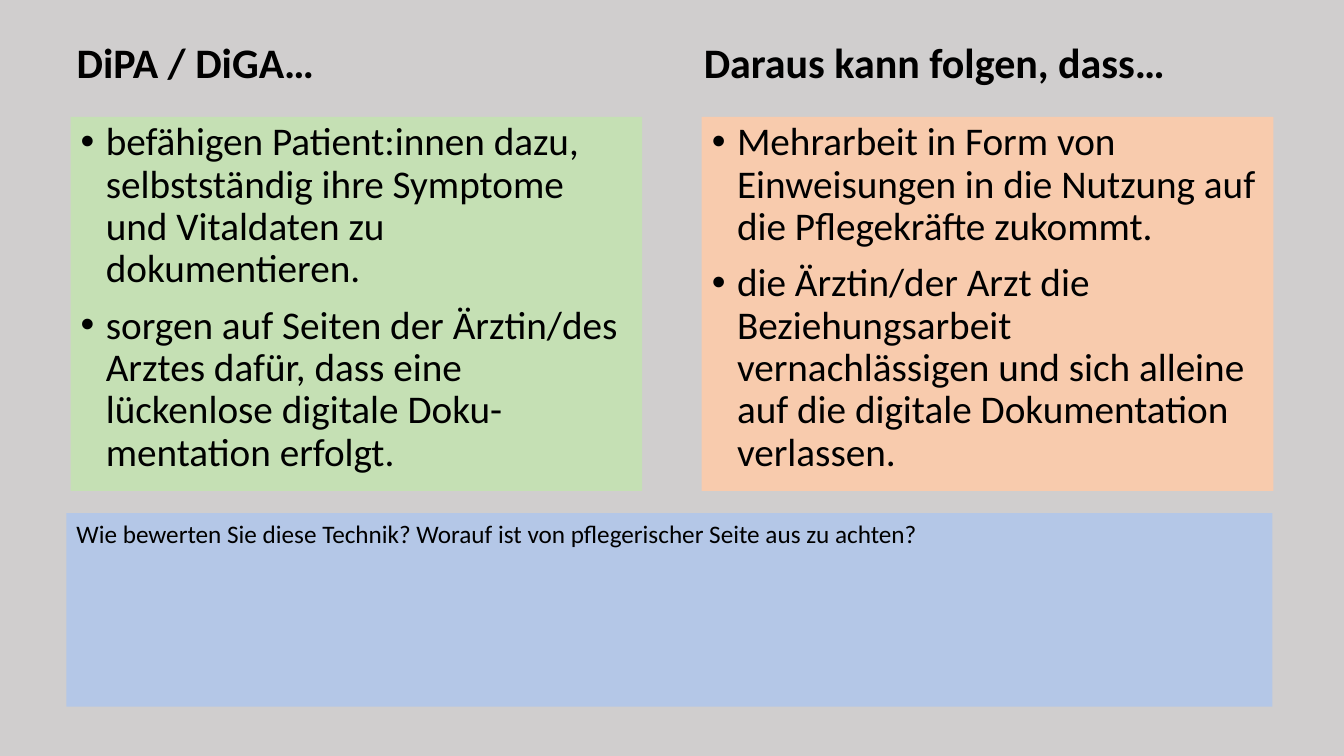
from dataclasses import dataclass

from lxml.etree import SubElement
from pptx import Presentation
from pptx.dml.color import RGBColor
from pptx.enum.shapes import MSO_SHAPE
from pptx.enum.text import MSO_ANCHOR, MSO_AUTO_SIZE, PP_ALIGN
from pptx.oxml.ns import qn
from pptx.util import Inches, Pt


@dataclass(frozen=True)
class Theme:
    """Colours, font and type sizes of the slide."""
    background: str = "D0CECE"
    benefits: str = "C5E0B4"
    risks: str = "F8CBAD"
    question: str = "B4C7E7"
    text: str = "000000"
    font: str = "Calibri"
    title_size: int = 30
    body_size: int = 28
    question_size: int = 18


THEME = Theme()
HEADINGS = ("DiPA / DiGA…", "Daraus kann folgen, dass…")
BENEFITS = (
    "befähigen Patient:innen dazu, selbstständig ihre Symptome und Vitaldaten zu dokumentieren.",
    "sorgen auf Seiten der Ärztin/des Arztes dafür, dass eine lückenlose digitale Doku-mentation erfolgt.",
)
RISKS = (
    "Mehrarbeit in Form von Einweisungen in die Nutzung auf die Pflegekräfte zukommt.",
    "die Ärztin/der Arzt die Beziehungsarbeit vernachlässigen und sich alleine auf die digitale "
    "Dokumentation verlassen.",
)
QUESTION = "Wie bewerten Sie diese Technik? Worauf ist von pflegerischer Seite aus zu achten?"


def apply_format(target, values):
    """Set every attribute named in values on the target."""
    for name, value in values.items():
        setattr(target, name, value)


def place(shape, left, top, width, height):
    """Move and size a shape, in inches."""
    sides = {"left": left, "top": top, "width": width, "height": height}
    apply_format(shape, {name: Inches(value) for name, value in sides.items()})


def fill_solid(target, color):
    """Give a shape or background a solid fill."""
    target.fill.solid()
    target.fill.fore_color.rgb = RGBColor.from_string(color)


def write_text(shape, lines, size, bold=False, spacing=None):
    """Write left-aligned paragraphs from the top of a shape."""
    frame = shape.text_frame
    frame.text = "\n".join(lines)
    apply_format(frame, {"word_wrap": True, "auto_size": MSO_AUTO_SIZE.NONE,
                         "vertical_anchor": MSO_ANCHOR.TOP})
    for para in frame.paragraphs:
        apply_format(para, {"alignment": PP_ALIGN.LEFT, **(spacing or {})})
        for span in para.runs:
            apply_format(span.font, {"name": THEME.font, "size": Pt(size), "bold": bold})
            span.font.color.rgb = RGBColor.from_string(THEME.text)


def add_headings(title, headings, second_column):
    """Set both column headings in the title, parted by a tab stop."""
    place(title, 0.66, 0.31, 11.71, 0.61)
    write_text(title, ["\t".join(headings)], THEME.title_size, bold=True)
    properties = title.text_frame.paragraphs[0]._p.get_or_add_pPr()
    stops = SubElement(properties, qn("a:tabLst"))
    SubElement(stops, qn("a:tab"), pos=str(Inches(second_column)), algn="l")


def add_list(body, left, lines, color):
    """Turn a body placeholder into a coloured bullet list."""
    place(body, left, 1.16, 5.67, 3.71)
    fill_solid(body, color)
    write_text(body, lines, THEME.body_size,
               spacing={"line_spacing": 0.9, "space_before": Pt(10)})
    for para in body.text_frame.paragraphs:
        properties = para._p.get_or_add_pPr()
        properties.set("marL", str(Inches(0.25)))
        properties.set("indent", str(Inches(-0.25)))


def add_question(slide, question):
    """Add the discussion panel below the lists."""
    panel = slide.shapes.add_shape(MSO_SHAPE.RECTANGLE, 0, 0, 0, 0)
    place(panel, 0.66, 5.09, 11.96, 1.92)
    panel.shadow.inherit = False
    fill_solid(panel, THEME.question)
    panel.line.fill.background()
    write_text(panel, [question], THEME.question_size)


def main():
    """Build the slide and save the deck."""
    deck = Presentation()
    apply_format(deck, {"slide_width": Inches(13.33), "slide_height": Inches(7.5)})
    page = deck.slides.add_slide(deck.slide_layouts.get_by_name("Two Content"))
    fill_solid(page.background, THEME.background)
    title, left_body, right_body = page.placeholders
    add_headings(title, HEADINGS, 6.22)
    add_list(left_body, 0.7, BENEFITS, THEME.benefits)
    add_list(right_body, 6.96, RISKS, THEME.risks)
    add_question(page, QUESTION)
    deck.save("out.pptx")


if __name__ == "__main__":
    main()
